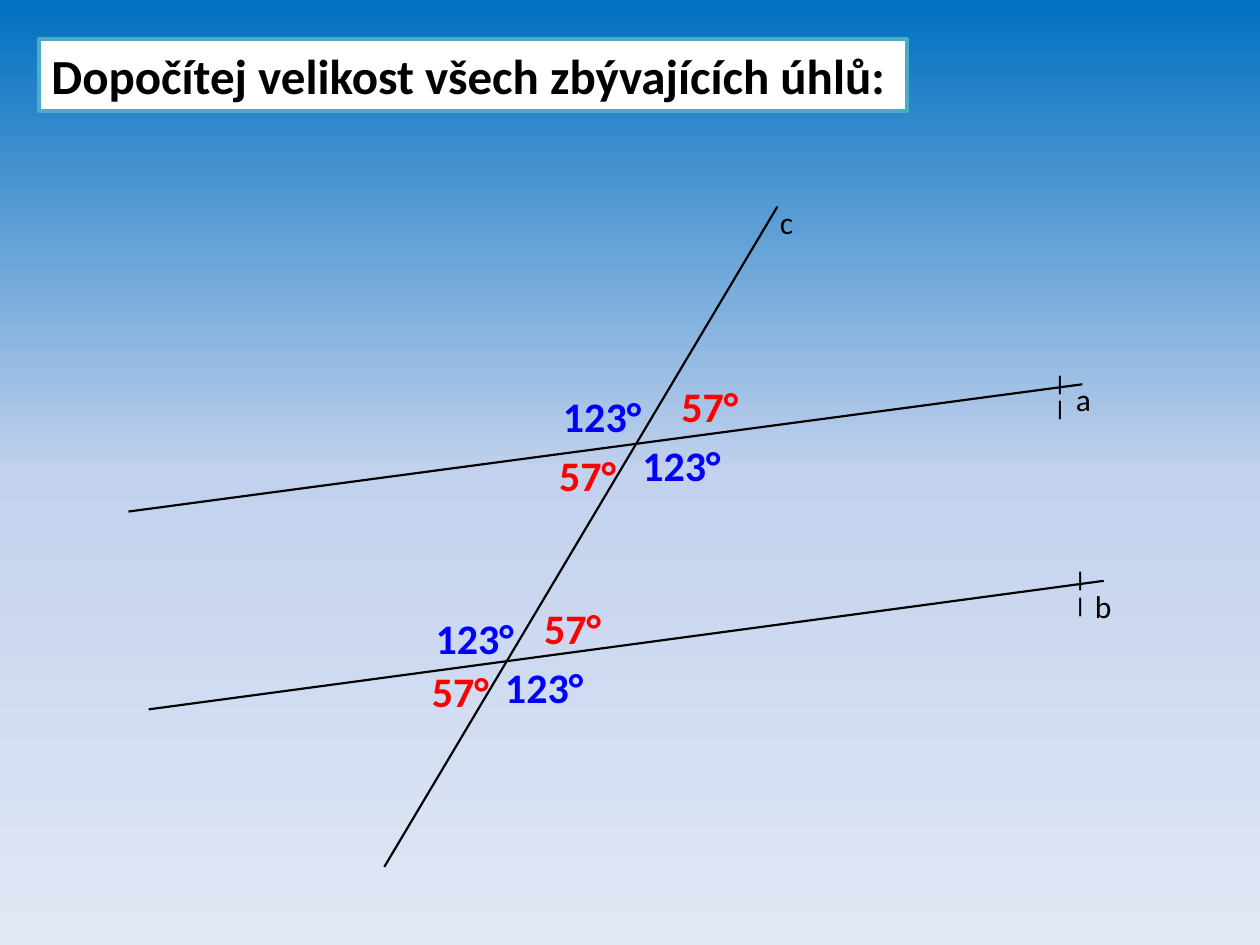
from copy import deepcopy

from lxml import etree
from pptx import Presentation
from pptx import util as u
from pptx.dml.color import RGBColor
from pptx.enum import shapes, text
from pptx.oxml.ns import qn

THEME = {
    "font": "Calibri", "ink": "000000", "paper": "FFFFFF", "frame": "4BACC6",
    "sky": [(0, "0070C0"), (0.5, "C2D1ED"), (1, "E1E8F5")],
    "title_size": 28, "angle_size": 24, "name_size": 18, "mark_size": 12,
    "line_width": 1.25, "frame_width": 2,
}

TITLE = ("Dopočítej velikost všech zbývajících úhlů:", (0.31, 0.31, 6.89, 0.57))
LINES = [  # parallels a and b, transversal c
    ((1.02, 4.06), (8.59, 3.05)),
    ((1.18, 5.63), (8.76, 4.61)),
    ((6.17, 1.64), (3.05, 6.88)),
]
LINE_NAMES = [("a", 8.44, 2.97), ("b", 8.59, 4.61), ("c", 6.09, 1.56)]
PARALLEL_MARK = "||"
MARK_POSITIONS = [(8.28, 2.89), (8.44, 4.45)]
ANGLES = [  # value, colour, box width, positions
    ("57°", "FF0000", 0.66, [(5.31, 2.97), (4.34, 3.52), (4.22, 4.73), (3.33, 5.23)]),
    ("123°", "0000FF", 0.83, [(5, 3.44), (4.37, 3.05), (3.91, 5.2), (3.36, 4.81)]),
]


def rgb(code):
    return RGBColor.from_string(code)


def paint_background(slide):
    fill = slide.background.fill
    fill.gradient()
    fill.gradient_angle = 270
    last = fill.gradient_stops[-1]._gs
    last.addprevious(deepcopy(last))
    for stop, (position, color) in zip(fill.gradient_stops, THEME["sky"]):
        stop.position = position
        stop.color.rgb = rgb(color)


def draw_line(slide, start, end):
    points = [u.Inches(v) for v in (*start, *end)]
    line = slide.shapes.add_connector(shapes.MSO_CONNECTOR.STRAIGHT, *points)
    line.line.color.rgb = rgb(THEME["ink"])
    line.line.width = u.Pt(THEME["line_width"])
    etree.SubElement(line._element.spPr, qn("a:effectLst"))


def write(shape, words, size, color=THEME["ink"], bold=False, italic=False, wrap=False):
    frame = shape.text_frame
    frame.word_wrap = wrap
    frame.auto_size = text.MSO_AUTO_SIZE.SHAPE_TO_FIT_TEXT
    frame.vertical_anchor = text.MSO_ANCHOR.TOP
    paragraph = frame.paragraphs[0]
    paragraph.alignment = text.PP_ALIGN.LEFT
    run = paragraph.add_run()
    run.text = words
    font = run.font
    font.name, font.size = THEME["font"], u.Pt(size)
    font.bold, font.italic = bold, italic
    font.color.rgb = rgb(color)


def add_label(slide, box, words, size, **style):
    write(slide.shapes.add_textbox(*map(u.Inches, box)), words, size, **style)


def add_title(slide):
    words, box = TITLE
    panel = slide.shapes.add_shape(shapes.MSO_SHAPE.RECTANGLE, *map(u.Inches, box))
    panel.shadow.inherit = False
    panel.fill.solid()
    panel.fill.fore_color.rgb = rgb(THEME["paper"])
    panel.line.color.rgb = rgb(THEME["frame"])
    panel.line.width = u.Pt(THEME["frame_width"])
    write(panel, words, THEME["title_size"], bold=True)


def main():
    deck = Presentation()
    deck.slide_width, deck.slide_height = u.Inches(10), u.Inches(7.5)
    slide = deck.slides.add_slide(deck.slide_layouts[6])
    paint_background(slide)
    for start, end in LINES:
        draw_line(slide, start, end)
    add_title(slide)
    for left, top in MARK_POSITIONS:
        # The narrow box wraps the two bars one below the other.
        add_label(slide, (left, top, 0.27, 0.3), PARALLEL_MARK, THEME["mark_size"],
                  bold=True, italic=True, wrap=True)
    for name, left, top in LINE_NAMES:
        add_label(slide, (left, top, 0.32, 0.4), name, THEME["name_size"])
    for value, color, width, positions in ANGLES:
        for left, top in positions:
            add_label(slide, (left, top, width, 0.5), value, THEME["angle_size"],
                      color=color, bold=True)
    deck.save("out.pptx")


if __name__ == "__main__":
    main()
